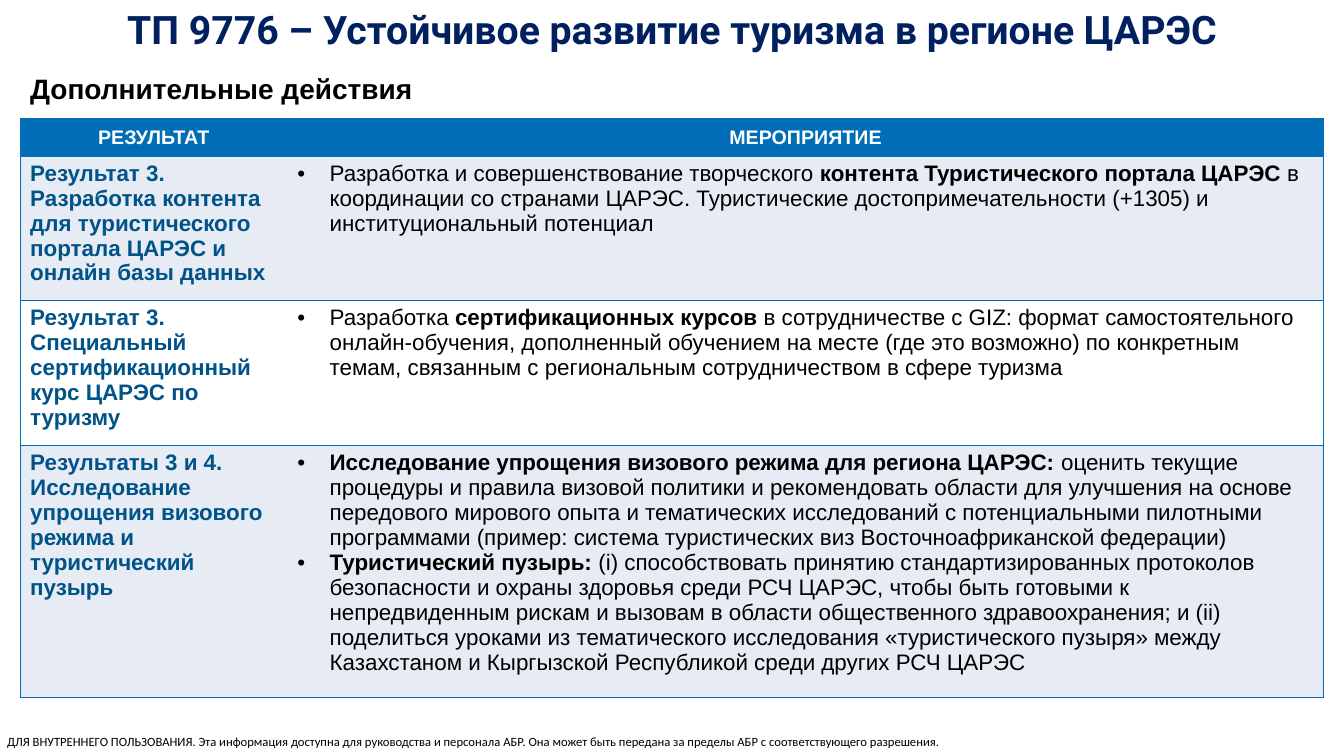
from lxml.etree import SubElement
from pptx import Presentation
from pptx.dml.color import RGBColor
from pptx.enum.text import MSO_ANCHOR, PP_ALIGN
from pptx.oxml.ns import qn
from pptx.util import Pt

PX = 9144
NAVY = RGBColor(0x00, 0x20, 0x60)
BLUE = RGBColor(0x00, 0x6E, 0xB7)
DEEP_BLUE = RGBColor(0x00, 0x53, 0x89)
PALE = RGBColor(0xE7, 0xEB, 0xF3)
WHITE = RGBColor(0xFF, 0xFF, 0xFF)
BLACK = RGBColor(0x00, 0x00, 0x00)


def write(frame, paragraphs, size=16, color=BLACK, font="Arial",
          align=PP_ALIGN.LEFT, hanging=0, after=0):
    frame.word_wrap = True
    for index, runs in enumerate(paragraphs):
        paragraph = frame.paragraphs[0] if index == 0 else frame.add_paragraph()
        paragraph.alignment = align
        paragraph.space_after = Pt(after)
        if hanging:
            properties = paragraph._p.get_or_add_pPr()
            properties.set("marL", str(hanging * PX))
            properties.set("indent", str(-hanging * PX))
            SubElement(properties, qn("a:buFont"), typeface="Arial")
            SubElement(properties, qn("a:buChar"), char="•")
        for text, bold in runs:
            run = paragraph.add_run()
            run.text = text
            run.font.name = font
            run.font.size = Pt(size)
            run.font.bold = bold
            run.font.color.rgb = color


def draw_borders(cell, visible):
    properties = cell._tc.get_or_add_tcPr()
    for side in "LRTB":
        line = SubElement(properties, qn(f"a:ln{side}"), w=str(Pt(1)))
        if side in visible:
            paint = SubElement(line, qn("a:solidFill"))
            SubElement(paint, qn("a:srgbClr"), val=str(BLUE))
        else:
            SubElement(line, qn("a:noFill"))


deck = Presentation()
deck.slide_width, deck.slide_height = 1333 * PX, 750 * PX
slide = deck.slides.add_slide(deck.slide_layouts[6])

disclaimer = slide.shapes.add_textbox(7 * PX, 728 * PX, 1120 * PX, 15 * PX).text_frame
disclaimer.margin_left = disclaimer.margin_right = 0
disclaimer.margin_top = disclaimer.margin_bottom = 0
write(disclaimer, [[(
    "ДЛЯ ВНУТРЕННЕГО ПОЛЬЗОВАНИЯ. Эта информация доступна для руководства и персонала АБР. "
    "Она может быть передана за пределы АБР с соответствующего разрешения.", False)]],
    size=9, font="Calibri")

title = slide.shapes.add_textbox(58 * PX, 0, 1217 * PX, 57 * PX).text_frame
write(title, [[("ТП 9776 – Устойчивое развитие туризма в регионе ЦАРЭС", True)]],
      size=28, color=NAVY, font="Roboto", align=PP_ALIGN.CENTER)

subtitle = slide.shapes.add_textbox(20 * PX, 66 * PX, 911 * PX, 44 * PX).text_frame
write(subtitle, [[("Дополнительные действия", True)]], size=20, after=6)

outputs = [
    ("Результат 3. Разработка контента для туристического портала ЦАРЭС и онлайн базы данных", [
        [("Разработка и совершенствование творческого ", False),
         ("контента Туристического портала ЦАРЭС ", True),
         ("в координации со странами ЦАРЭС. Туристические достопримечательности (+1305) и "
          "институциональный потенциал", False)],
    ]),
    ("Результат 3. Специальный сертификационный курс ЦАРЭС по туризму", [
        [("Разработка ", False),
         ("сертификационных курсов ", True),
         ("в сотрудничестве с GIZ: формат самостоятельного онлайн-обучения, дополненный "
          "обучением на месте (где это возможно) по конкретным темам, связанным с "
          "региональным сотрудничеством в сфере туризма", False)],
    ]),
    ("Результаты 3 и 4. Исследование упрощения визового режима и туристический пузырь", [
        [("Исследование упрощения визового режима для региона ЦАРЭС:", True),
         (" оценить текущие процедуры и правила визовой политики и рекомендовать области для "
          "улучшения на основе передового мирового опыта и тематических исследований с "
          "потенциальными пилотными программами (пример: система туристических виз "
          "Восточноафриканской федерации)", False)],
        [("Туристический пузырь:", True),
         (" (i) способствовать принятию стандартизированных протоколов безопасности и охраны "
          "здоровья среди РСЧ ЦАРЭС, чтобы быть готовыми к непредвиденным рискам и вызовам в "
          "области общественного здравоохранения; и (ii) поделиться уроками из тематического "
          "исследования «туристического пузыря» между Казахстаном и Кыргызской Республикой "
          "среди других РСЧ ЦАРЭС", False)],
    ]),
]

row_heights = [37, 143, 144, 250]
column_widths = [265, 1028]
plan = slide.shapes.add_table(
    len(row_heights), len(column_widths), 20 * PX, 118 * PX,
    sum(column_widths) * PX, sum(row_heights) * PX).table
for row, height in zip(plan.rows, row_heights):
    row.height = height * PX
for column, width in zip(plan.columns, column_widths):
    column.width = width * PX

for row_index, fill in enumerate([BLUE, PALE, WHITE, PALE]):
    for column_index, borders in enumerate(["LTB", "RTB"]):
        cell = plan.cell(row_index, column_index)
        draw_borders(cell, borders)
        cell.fill.solid()
        cell.fill.fore_color.rgb = fill

for column_index, heading in enumerate(["РЕЗУЛЬТАТ", "МЕРОПРИЯТИЕ"]):
    cell = plan.cell(0, column_index)
    cell.vertical_anchor = MSO_ANCHOR.MIDDLE
    write(cell.text_frame, [[(heading, True)]], size=14, color=WHITE, align=PP_ALIGN.CENTER)

for row_index, (output, activities) in enumerate(outputs, start=1):
    write(plan.cell(row_index, 0).text_frame, [[(output, True)]], color=DEEP_BLUE)
    write(plan.cell(row_index, 1).text_frame, activities, hanging=32)

deck.save("out.pptx")
